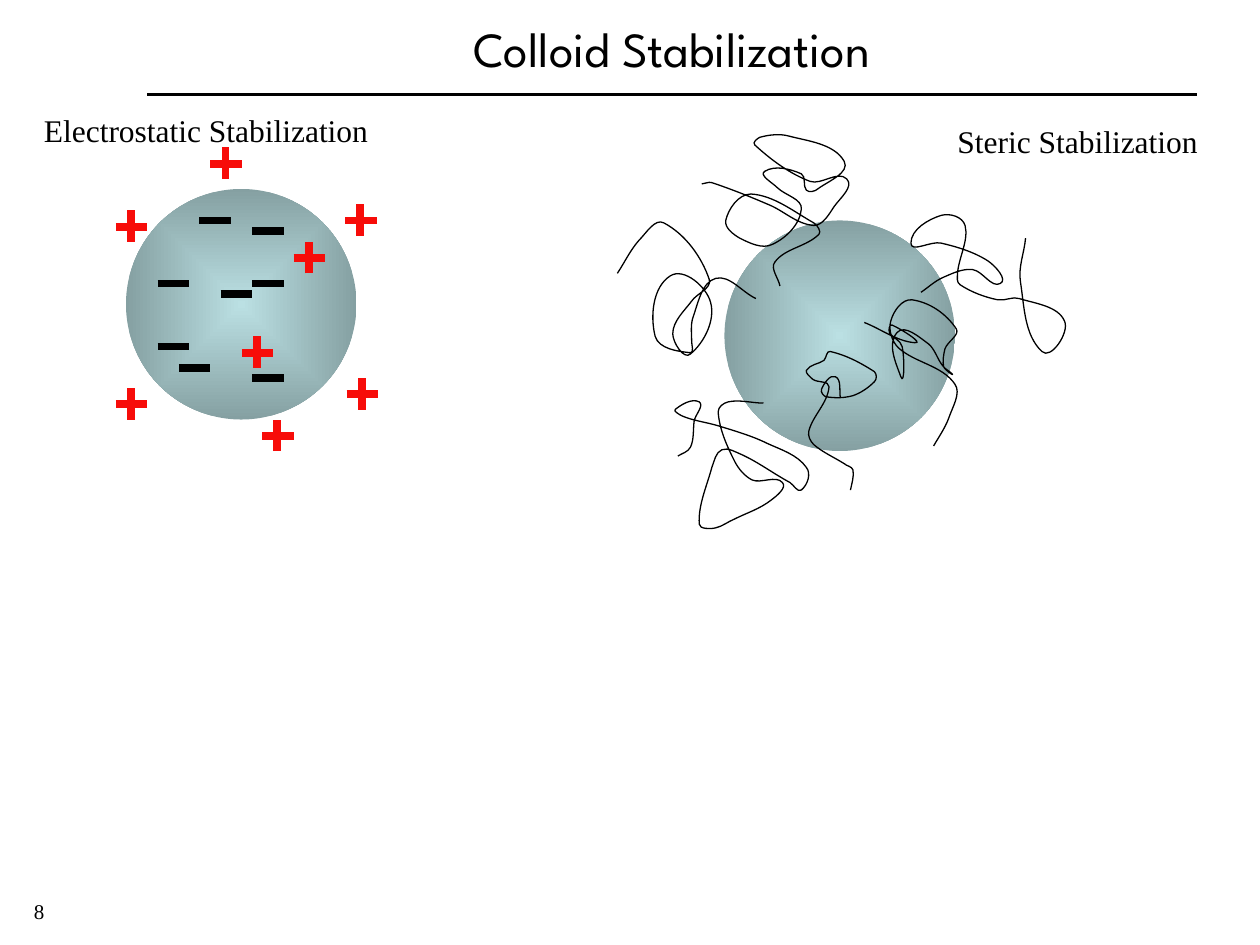
import dataclasses
import itertools
import math

import pptx
import pptx.dml.color
import pptx.enum.shapes
import pptx.enum.text
import pptx.oxml
import pptx.oxml.ns
import pptx.oxml.xmlchemy
import pptx.util

PX = 9144  # EMU per px, 100 px to the inch
BLACK, RED, PALE_TEAL = "000000", "F70C09", "BBE0E3"
SERIF, SANS = "Times New Roman", "League Spartan"
CHARGE_SIZE, CHARGE_WEIGHT = 25, 4.5
PARTICLE_SIZE = 183
Point = tuple[float, float]


@dataclasses.dataclass
class Label:
    text: str
    left: int
    top: int
    width: int
    height: int
    size: int
    font: str = SERIF
    wrap: bool = False
    grow: bool = True
    centred: bool = False


@dataclasses.dataclass
class Spot:
    left: int
    top: int


LABELS = [
    Label("8", 17, 708, 40, 30, 12),
    Label("Colloid Stabilization", 108, 17, 850, 42, 28, SANS, wrap=True, grow=False, centred=True),
    Label("Electrostatic Stabilization", 25, 83, 281, 40, 18, wrap=True),
    Label("Steric Stabilization", 750, 92, 211, 40, 18),
]
PARTICLES = [Spot(100, 150), Spot(575, 175)]
NEGATIVE_CHARGES = [
    Spot(125, 225), Spot(125, 275), Spot(200, 225), Spot(200, 300),
    Spot(200, 183), Spot(142, 292), Spot(175, 233), Spot(158, 175),
]
POSITIVE_CHARGES = [
    Spot(233, 192), Spot(92, 308), Spot(208, 333), Spot(167, 117),
    Spot(92, 167), Spot(275, 300), Spot(192, 267), Spot(274, 162),
]

# Points that each polymer strand runs through
STRANDS = [
    [(600, 237), (568, 221), (550, 252), (549, 271), (548, 280), (520, 267), (532, 219), (564, 240),
     (548, 281), (534, 265), (549, 239), (563, 222), (527, 177), (507, 191), (490, 217)],
    [(667, 316), (663, 299), (652, 309), (656, 315), (677, 314), (694, 303), (694, 295), (659, 279),
     (654, 286), (640, 294), (645, 301), (658, 307), (642, 342), (646, 353), (670, 368), (677, 373),
     (675, 389)],
    [(731, 232), (749, 220), (772, 214), (794, 225), (784, 207), (747, 193), (723, 193), (747, 171),
     (766, 179), (760, 217), (762, 226), (792, 238), (809, 237), (845, 255), (827, 279), (810, 224),
     (814, 189)],
    [(619, 227), (615, 208), (650, 186), (646, 177), (596, 154), (576, 175), (587, 189), (613, 194),
     (636, 166), (617, 149), (607, 136), (636, 138), (640, 151), (649, 150), (670, 128), (626, 108),
     (603, 109), (599, 115), (643, 144), (672, 142), (662, 164), (646, 179), (609, 162), (565, 145),
     (557, 146)],
    [(606, 320), (578, 319), (570, 327), (583, 366), (597, 381), (621, 383), (612, 397), (583, 412),
     (568, 419), (555, 416), (565, 371), (573, 357), (589, 361), (627, 383), (636, 389), (640, 371),
     (609, 352), (570, 338), (541, 330), (536, 325), (555, 319), (551, 334), (548, 355), (538, 362)],
    [(686, 256), (726, 272), (708, 258), (706, 264), (716, 275), (715, 299), (712, 264), (737, 273),
     (748, 290), (756, 297), (749, 291), (750, 277), (759, 261), (724, 238), (707, 255), (713, 276),
     (758, 305), (753, 332), (741, 354)],
]


def rgb(colour: str) -> pptx.dml.color.RGBColor:
    return pptx.dml.color.RGBColor.from_string(colour)


def add_label(shapes, label: Label) -> None:
    box = shapes.add_textbox(*(n * PX for n in (label.left, label.top, label.width, label.height)))
    frame = box.text_frame
    frame.word_wrap = label.wrap
    if label.grow:
        frame.auto_size = pptx.enum.text.MSO_AUTO_SIZE.SHAPE_TO_FIT_TEXT
    paragraph = frame.paragraphs[0]
    if label.centred:
        frame.vertical_anchor = pptx.enum.text.MSO_ANCHOR.MIDDLE
        paragraph.alignment = pptx.enum.text.PP_ALIGN.CENTER
    run = paragraph.add_run()
    run.text = label.text
    run.font.name = label.font
    run.font.size = pptx.util.Pt(label.size)
    run.font.color.rgb = rgb(BLACK)


def add_line(shapes, x1: int, y1: int, x2: int, y2: int, colour: str, weight: float) -> None:
    line = shapes.add_connector(
        pptx.enum.shapes.MSO_CONNECTOR.STRAIGHT, x1 * PX, y1 * PX, x2 * PX, y2 * PX)
    line.line.color.rgb = rgb(colour)
    line.line.width = pptx.util.Pt(weight)
    line._element.spPr.append(pptx.oxml.xmlchemy.OxmlElement("a:effectLst"))


def add_particle(shapes, spot: Spot) -> None:
    particle = shapes.add_shape(
        pptx.enum.shapes.MSO_SHAPE.OVAL,
        spot.left * PX, spot.top * PX, PARTICLE_SIZE * PX, PARTICLE_SIZE * PX)
    particle.shadow.inherit = False
    particle.line.fill.background()
    particle.fill.gradient()
    for stop, position in zip(particle.fill.gradient_stops, (0, 1)):
        stop.color.rgb = rgb(PALE_TEAL)
        stop.position = position
    # Darken the rim and spread the gradient from the centre
    gradient = particle._element.spPr.find(pptx.oxml.ns.qn("a:gradFill"))
    shade = pptx.oxml.xmlchemy.OxmlElement("a:shade")
    shade.set("val", "46275")
    gradient.xpath(".//a:srgbClr")[-1].append(shade)
    spread = pptx.oxml.parse_xml(
        f'<a:path {pptx.oxml.ns.nsdecls("a")} path="shape">'
        '<a:fillToRect l="50000" t="50000" r="50000" b="50000"/></a:path>')
    gradient.replace(gradient.find(pptx.oxml.ns.qn("a:lin")), spread)


def handle(origin: Point, before: Point, after: Point, reach: float) -> Point:
    """Move from origin by reach, along the direction from before to after."""
    ratio = reach / max(math.dist(before, after), 1)
    return tuple(o + ratio * (a - b) for o, b, a in zip(origin, before, after))


def bezier_points(anchors: list[Point]) -> list[Point]:
    """Two handles and an end point for each stretch between anchors."""
    padded = [anchors[0], *anchors, anchors[-1]]
    points = []
    for before, start, end, after in zip(padded, padded[1:], padded[2:], padded[3:]):
        reach = math.dist(start, end) / 3
        points += [handle(start, before, end, reach), handle(end, after, start, reach), end]
    return points


def add_strand(shapes, anchors: list[Point]) -> None:
    builder = shapes.build_freeform(*anchors[0], scale=PX)
    builder.add_line_segments(bezier_points(anchors), close=False)
    strand = builder.convert_to_shape()
    strand.shadow.inherit = False
    strand.fill.background()
    strand.line.color.rgb = rgb(BLACK)
    strand.line.width = pptx.util.Pt(0.75)
    # Join every three segments into one Bezier curve
    segments = iter(strand._element.xpath(".//a:lnTo"))
    while trio := list(itertools.islice(segments, 3)):
        curve = pptx.oxml.xmlchemy.OxmlElement("a:cubicBezTo")
        trio[0].addprevious(curve)
        for segment in trio:
            curve.append(segment[0])
            segment.getparent().remove(segment)


def add_negative(shapes, spot: Spot, colour: str = BLACK) -> None:
    add_line(shapes, spot.left, spot.top, spot.left + CHARGE_SIZE, spot.top, colour, CHARGE_WEIGHT)


def add_positive(shapes, spot: Spot) -> None:
    plus = shapes.add_group_shape().shapes
    add_negative(plus, Spot(spot.left, spot.top + 13), RED)
    middle = spot.left + 12
    add_line(plus, middle, spot.top + CHARGE_SIZE, middle, spot.top, RED, CHARGE_WEIGHT)


def main() -> None:
    deck = pptx.Presentation()
    deck.slide_width, deck.slide_height = 1000 * PX, 750 * PX
    shapes = deck.slides.add_slide(deck.slide_layouts[6]).shapes

    # Title rule
    add_line(shapes, 117, 75, 950, 75, BLACK, 2.25)

    # Particles, strands and charges, then the wording
    for draw, parts in (
        (add_particle, PARTICLES), (add_strand, STRANDS), (add_negative, NEGATIVE_CHARGES),
        (add_positive, POSITIVE_CHARGES), (add_label, LABELS),
    ):
        for part in parts:
            draw(shapes, part)

    deck.save("out.pptx")


if __name__ == "__main__":
    main()
